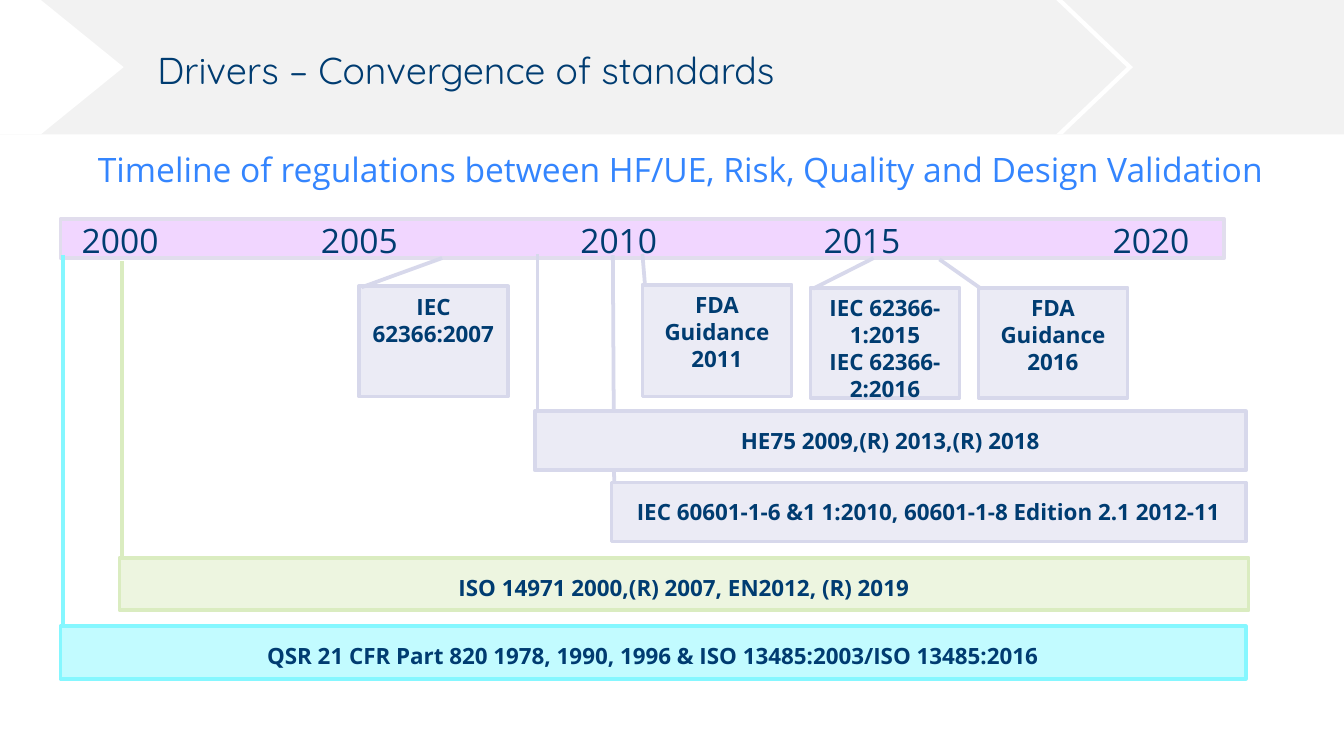
import pptx
import pptx.util
import pptx.dml.color
import pptx.enum.shapes
import pptx.enum.text

Inches = pptx.util.Inches
SHAPE = pptx.enum.shapes.MSO_SHAPE
ANCHOR = pptx.enum.text.MSO_ANCHOR
ALIGN = pptx.enum.text.PP_ALIGN

COLORS = {
    "white": "FFFFFF", "band": "F2F2F2", "navy": "003C71", "blue": "3485FE",
    "pink": "F1D6FF", "pink line": "E1DDED",
    "lilac": "EBEBF5", "lilac line": "D7D8EB",
    "green": "EDF5E0", "green line": "DAECC0",
    "cyan": "C2FBFF", "cyan line": "85F7FF",
}


def write(box, text, size=12, font="Open Sans", ink="navy", bold=False,
          align=ALIGN.LEFT, anchor=ANCHOR.TOP):
    frame = box.text_frame
    frame.word_wrap = True
    frame.auto_size = pptx.enum.text.MSO_AUTO_SIZE.NONE
    frame.vertical_anchor = anchor
    frame.text = text
    for para in frame.paragraphs:
        para.alignment = align
        para.line_spacing = 1.0
        para.space_before = pptx.util.Pt(0)
        para.font.size = pptx.util.Pt(size)
        para.font.name = font
        para.font.bold = bold
        para.font.color.rgb = pptx.dml.color.RGBColor.from_string(COLORS[ink])


def add_block(kind, left, top, width, height, fill, line=None, adjust=()):
    """Add a flat preset shape with an optional 2 pt outline."""
    block = slide.shapes.add_shape(
        kind, Inches(left), Inches(top), Inches(width), Inches(height))
    block.shadow.inherit = False
    block.fill.solid()
    block.fill.fore_color.rgb = pptx.dml.color.RGBColor.from_string(COLORS[fill])
    if line:
        block.line.color.rgb = pptx.dml.color.RGBColor.from_string(COLORS[line])
        block.line.width = pptx.util.Pt(2)
    else:
        block.line.fill.background()
    for index, value in enumerate(adjust):
        block.adjustments[index] = value
    return block


deck = pptx.Presentation()
deck.slide_width = Inches(10)
deck.slide_height = Inches(10 * 9 / 16)
slide = deck.slides.add_slide(deck.slide_layouts[5])

# Header band with its two white arrow cuts
add_block(SHAPE.RECTANGLE, 0, 0, 10, 1, "band")
add_block(SHAPE.CHEVRON, 7.86, 0, 0.57, 1, "white", adjust=[0.92])
add_block(SHAPE.PENTAGON, 0, 0, 0.92, 1, "white", adjust=[0.67])

title = slide.shapes.title
title.left, title.top = Inches(1.07), Inches(0.3)
title.width, title.height = Inches(7.12), Inches(0.44)
write(title, "Drivers – Convergence of standards", size=20, font="Quicksand")
title.element.getparent().append(title.element)  # in front of the band

# Timeline bar, its heading and years
add_block(SHAPE.RECTANGLE, 0.45, 1.63, 8.66, 0.29, "pink", "pink line")
labels = [
    ("Timeline of regulations between HF/UE, Risk, Quality and Design Validation",
     0.63, 1.06, 8.89, "blue"),
    ("2000", 0.51, 1.59, 0.87, "navy"),
    ("2005", 2.29, 1.59, 1, "navy"),
    ("2010", 4.22, 1.59, 0.87, "navy"),
    ("2015", 6.03, 1.59, 0.94, "navy"),
    ("2020", 8.18, 1.59, 0.85, "navy"),
]
for text, left, top, width, ink in labels:
    label = slide.shapes.add_textbox(
        Inches(left), Inches(top), Inches(width), Inches(0.4))
    write(label, text, size=18, ink=ink)

# Standards: text, left, top, width, height, colour, leader end (x, y)
standards = [
    ("IEC 60601-1-6 &1 1:2010, 60601-1-8 Edition 2.1 2012-11",
     4.55, 3.59, 4.72, 0.44, "lilac", 4.56, 1.9),
    ("IEC 62366:2007", 2.67, 2.13, 1.11, 0.82, "lilac", 3.29, 1.92),
    ("IEC 62366-1:2015\nIEC 62366-2:2016",
     6.03, 2.14, 1.11, 0.82, "lilac", 6.5, 1.92),
    ("FDA Guidance\n2011", 4.78, 2.12, 1.11, 0.83, "lilac", 4.78, 1.89),
    ("HE75 2009,(R) 2013,(R) 2018",
     3.98, 3.06, 5.29, 0.44, "lilac", 4, 1.89),
    ("FDA Guidance\n2016", 7.28, 2.14, 1.11, 0.82, "lilac", 6.99, 1.93),
    ("ISO 14971 2000,(R) 2007, EN2012, (R) 2019",
     0.89, 4.15, 8.4, 0.39, "green", 0.91, 1.94),
    ("QSR 21 CFR Part 820 1978, 1990, 1996 & ISO 13485:2003/ISO 13485:2016",
     0.45, 4.66, 8.82, 0.39, "cyan", 0.47, 1.9),
]
for text, left, top, width, height, fill, end_x, end_y in standards:
    start_x = 0.02 / width
    leader = [0.01, start_x, (end_y - top) / height, (end_x - left) / width]
    callout = add_block(SHAPE.LINE_CALLOUT_1, left, top, width, height,
                        fill, fill + " line", leader)
    is_bar = height < 0.5
    write(callout, text, bold=True, align=ALIGN.CENTER,
          anchor=ANCHOR.MIDDLE if is_bar else ANCHOR.TOP)
    if fill != "lilac":
        callout.text_frame.margin_top = Inches(0.1)

deck.save("out.pptx")
